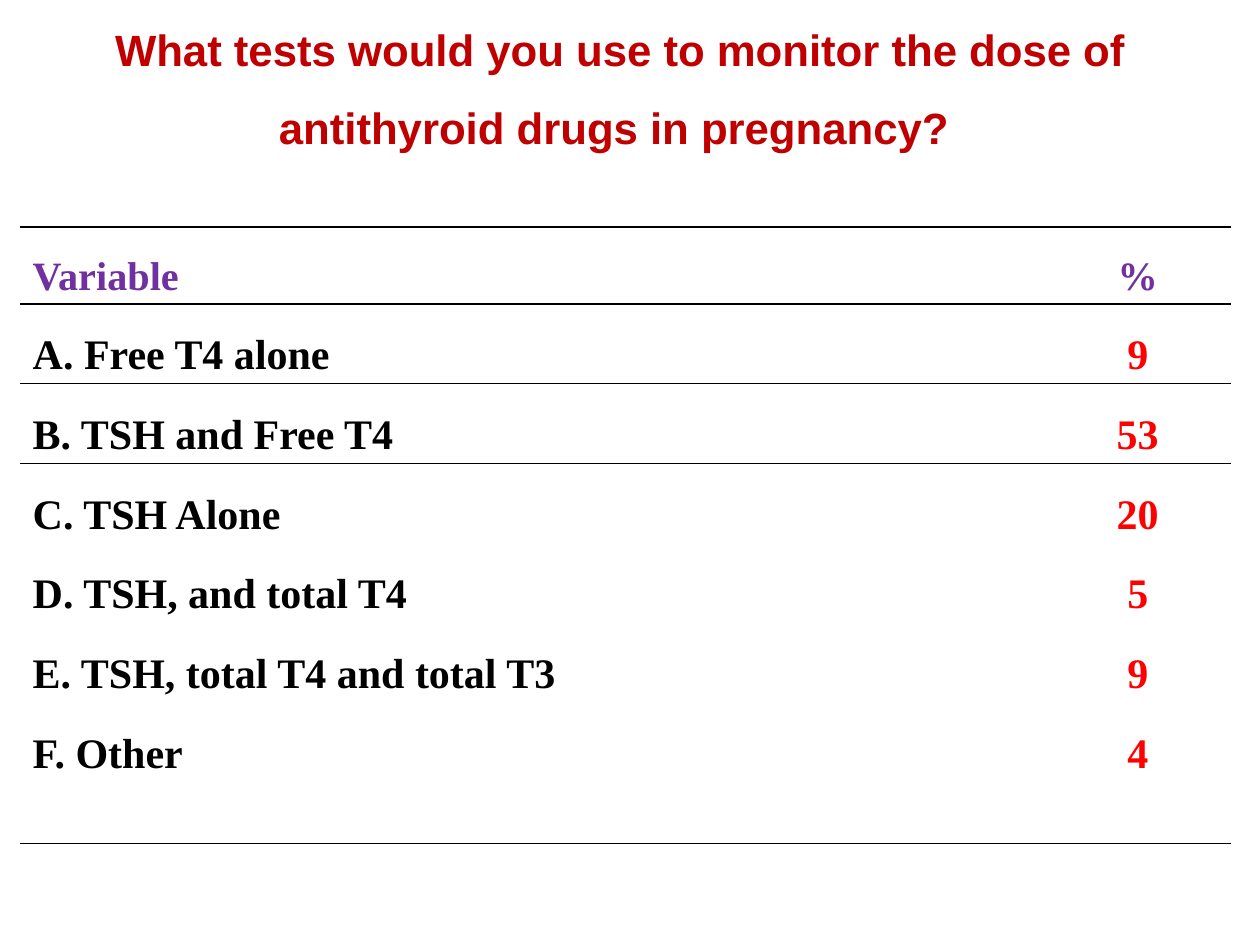
from dataclasses import dataclass

from lxml import etree
from pptx import Presentation, util as u
from pptx.dml.color import RGBColor
from pptx.enum import text
from pptx.oxml import ns


@dataclass(frozen=True)
class Theme:
    title: str = "C00000"
    header: str = "7030A0"
    label: str = "000000"
    value: str = "FF0000"
    rule: str = "000000"
    title_font: str = "Arial"
    table_font: str = "Times New Roman"
    title_size: int = 25
    header_size: int = 23
    body_size: int = 24
    line_spacing: float = 1.5
    rule_width: float = 1


@dataclass(frozen=True)
class Answer:
    label: str
    percent: str
    height: float
    borders: tuple = ()
    align: text.PP_ALIGN = text.PP_ALIGN.LEFT
    hanging: float = 0


THEME = Theme()
SLIDE_WIDTH, SLIDE_HEIGHT = 10, 7.5
TABLE_LEFT, TABLE_TOP = 0.16, 1.8
COLUMN_WIDTHS = (8.13, 1.48)
CELL_PADDING = 0.04
NO_STYLE_NO_GRID = "{2D5ABB26-0587-4C30-8999-92F81FD0307C}"

HEADER = Answer("Variable", "%", 0.61, ("lnT", "lnB"))
ANSWERS = (
    Answer("A. Free T4 alone", "9", 0.63, ("lnT", "lnB"), text.PP_ALIGN.JUSTIFY, 0.56),
    Answer("B. TSH and Free T4", "53", 0.63, ("lnT",)),
    Answer("C. TSH Alone", "20", 0.62),
    Answer("D. TSH, and total T4", "5", 0.62),
    Answer("E. TSH, total T4 and total T3", "9", 0.57),
    Answer("F. Other", "4", 1.12, ("lnB",)),
)


def write(frame, words: str, font: str, size: float, color: str, align) -> None:
    paragraph = frame.paragraphs[0]
    paragraph.alignment = align
    paragraph.line_spacing = THEME.line_spacing
    run = paragraph.add_run()
    run.text = words
    run.font.name = font
    run.font.size = u.Pt(size)
    run.font.bold = True
    run.font.color.rgb = RGBColor.from_string(color)


def add_borders(cell, sides: tuple) -> None:
    """Put the border lines ahead of the fill, as the schema orders them."""
    properties = cell._tc.get_or_add_tcPr()
    for index, side in enumerate(sides):
        line = etree.Element(ns.qn(f"a:{side}"), w=str(u.Pt(THEME.rule_width)))
        fill = etree.SubElement(line, ns.qn("a:solidFill"))
        etree.SubElement(fill, ns.qn("a:srgbClr"), val=THEME.rule)
        properties.insert(index, line)


def fill_row(table, index: int, answer: Answer, size: float, colors: tuple) -> None:
    table.rows[index].height = u.Inches(answer.height)
    words = (answer.label, answer.percent)
    alignments = (answer.align, text.PP_ALIGN.CENTER)
    for column, (word, color, align) in enumerate(zip(words, colors, alignments)):
        cell = table.cell(index, column)
        cell.margin_top = cell.margin_bottom = u.Inches(CELL_PADDING)
        cell.fill.background()
        add_borders(cell, answer.borders)
        write(cell.text_frame, word, THEME.table_font, size, color, align)
    if answer.hanging:
        indent = u.Inches(answer.hanging)
        properties = table.cell(index, 0).text_frame.paragraphs[0]._p.get_or_add_pPr()
        properties.set("marL", str(indent))
        properties.set("indent", str(-indent))


def add_answer_table(slide) -> None:
    height = HEADER.height + sum(answer.height for answer in ANSWERS)
    box = (TABLE_LEFT, TABLE_TOP, sum(COLUMN_WIDTHS), height)
    shape = slide.shapes.add_table(
        len(ANSWERS) + 1, len(COLUMN_WIDTHS), *map(u.Inches, box))
    table = shape.table
    table.first_row = table.horz_banding = False
    table._tbl.tblPr.find(ns.qn("a:tableStyleId")).text = NO_STYLE_NO_GRID
    for column, width in zip(table.columns, COLUMN_WIDTHS):
        column.width = u.Inches(width)
    fill_row(table, 0, HEADER, THEME.header_size, (THEME.header, THEME.header))
    for index, answer in enumerate(ANSWERS, start=1):
        fill_row(table, index, answer, THEME.body_size, (THEME.label, THEME.value))


def add_title(slide) -> None:
    box = slide.shapes.add_textbox(*map(u.Inches, (0.67, 0.17, 8.5, 0.85)))
    frame = box.text_frame
    frame.word_wrap = True
    frame.vertical_anchor = text.MSO_ANCHOR.MIDDLE
    question = ("What tests would you use to monitor the dose of "
                "antithyroid drugs in pregnancy? ")
    write(frame, question, THEME.title_font, THEME.title_size, THEME.title,
          text.PP_ALIGN.CENTER)


def main() -> None:
    presentation = Presentation()
    presentation.slide_width = u.Inches(SLIDE_WIDTH)
    presentation.slide_height = u.Inches(SLIDE_HEIGHT)
    slide = presentation.slides.add_slide(presentation.slide_layouts[6])
    add_answer_table(slide)
    add_title(slide)
    presentation.save("out.pptx")


if __name__ == "__main__":
    main()
